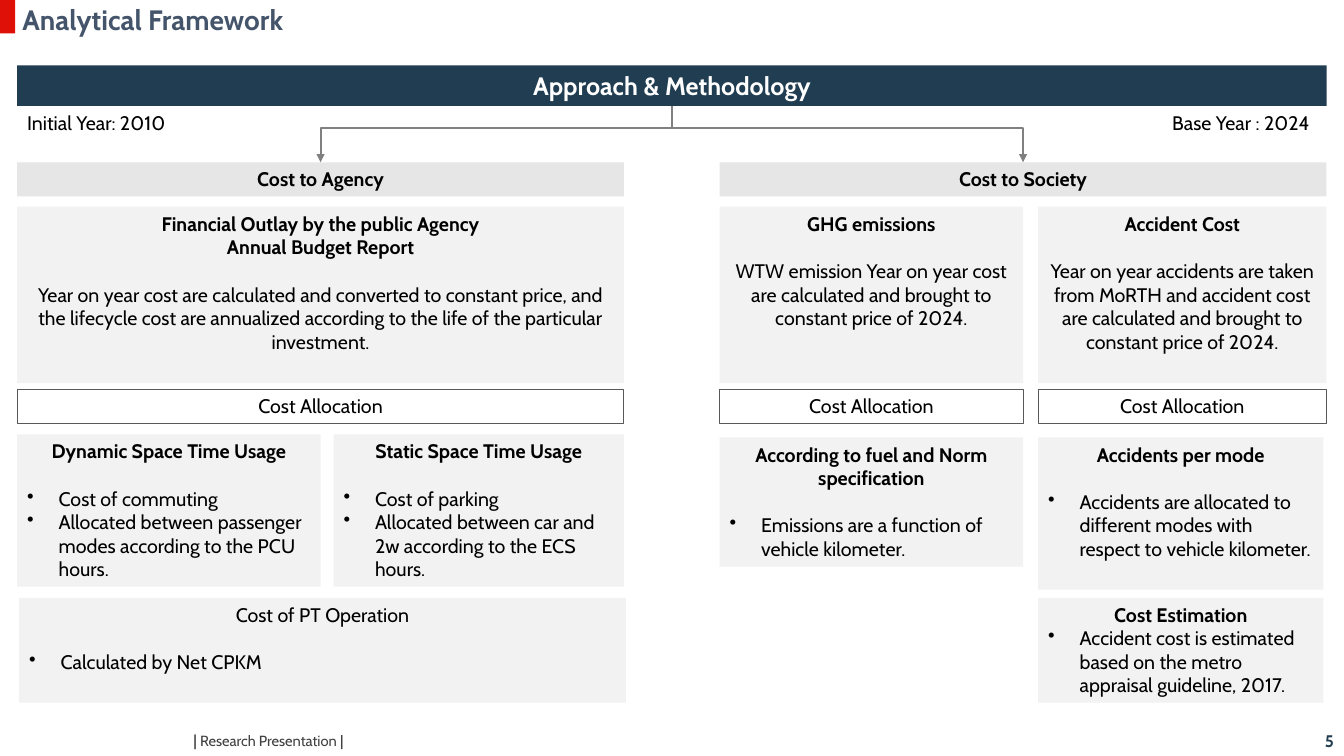
from dataclasses import dataclass

from lxml import etree
from pptx import Presentation
from pptx.dml.color import RGBColor
from pptx.enum.shapes import MSO_CONNECTOR, MSO_SHAPE
from pptx.enum.text import MSO_ANCHOR, PP_ALIGN
from pptx.oxml.ns import qn
from pptx.util import Pt

RECTANGLE = MSO_SHAPE.RECTANGLE
STRAIGHT = MSO_CONNECTOR.STRAIGHT
TOP, MIDDLE = MSO_ANCHOR.TOP, MSO_ANCHOR.MIDDLE
LEFT, CENTER, RIGHT = PP_ALIGN.LEFT, PP_ALIGN.CENTER, PP_ALIGN.RIGHT

FONT = "Cabin"
BLACK, WHITE, NAVY, SLATE = "000000", "FFFFFF", "203D52", "44546A"
RED, PALE, BAND, GREY, OUTLINE = "DF1007", "F2F2F2", "E7E6E6", "808080", "595959"

# Column edges and widths
AGENCY_X, STATIC_X, SOCIETY_X, ACCIDENT_X = 12.3, 238.3, 514.1, 741.6
HALF_W, WIDE_W, STATIC_W, ACCIDENT_W, MODE_W = 433.4, 216.7, 207.4, 205.9, 203.8
# Row tops and heights
BANNER_Y, YEAR_Y, HEADER_Y, SOURCE_Y = 46.8, 75.6, 116, 147.6
ALLOCATION_Y, USAGE_Y, MODE_Y, LAST_Y = 278, 310.3, 312.5, 427
BAR_H, SOURCE_H, USAGE_H, LAST_H = 24.3, 126, 108.7, 74.9
FORK_Y = 91.4
BLANK_LINE = 17


@dataclass
class Frame:
    x: float
    y: float
    width: float
    height: float


@dataclass
class Line:
    text: str
    bold: bool = False
    bullet: bool = False
    gap: float = 0
    align: PP_ALIGN = CENTER
    size: float = 14
    color: str = BLACK


@dataclass
class Card:
    frame: Frame
    lines: list[Line]
    fill: str = PALE


def rgb(color: str) -> RGBColor:
    return RGBColor.from_string(color)


def heading(text: str) -> Line:
    return Line(text, bold=True)


def bullet(text: str, gap: float = 0) -> Line:
    return Line(text, bullet=True, gap=gap, align=LEFT)


def write_lines(text_frame, lines: list[Line]) -> None:
    text_frame.word_wrap = True
    text_frame.vertical_anchor = TOP
    text_frame.text = "\n".join(line.text for line in lines)
    for para, line in zip(text_frame.paragraphs, lines):
        if line.bullet:
            properties = para._p.get_or_add_pPr()
            properties.set("marL", str(Pt(22.5)))
            properties.set("indent", str(Pt(-22.5)))
            etree.SubElement(properties, qn("a:buChar")).set("char", "•")
        para.alignment = line.align
        if line.gap:
            para.space_before = Pt(line.gap)
        for span in para.runs:
            span.font.name = FONT
            span.font.size = Pt(line.size)
            span.font.bold = line.bold
            span.font.color.rgb = rgb(line.color)


def place(frame: Frame) -> list[Pt]:
    return [Pt(value) for value in (frame.x, frame.y, frame.width, frame.height)]


def add_card(page, card: Card) -> None:
    box = page.shapes.add_shape(RECTANGLE, *place(card.frame))
    box.shadow.inherit = False
    if card.fill:
        box.fill.solid()
        box.fill.fore_color.rgb = rgb(card.fill)
        box.line.fill.background()
    else:
        box.fill.background()
        box.line.color.rgb = rgb(OUTLINE)
        box.line.width = Pt(0.75)
    if card.lines:
        write_lines(box.text_frame, card.lines)


def add_label(page, frame: Frame, line: Line):
    box = page.shapes.add_textbox(*place(frame))
    write_lines(box.text_frame, [line])
    return box.text_frame


def style_route(route) -> None:
    route.line.color.rgb = rgb(GREY)
    route.line.width = Pt(1.5)


def add_fork(page) -> None:
    left, right = AGENCY_X + HALF_W / 2, SOCIETY_X + HALF_W / 2
    builder = page.shapes.build_freeform(Pt(left), Pt(HEADER_Y))
    corners = [(left, FORK_Y), (right, FORK_Y), (right, HEADER_Y)]
    builder.add_line_segments([(Pt(x), Pt(y)) for x, y in corners], close=False)
    fork = builder.convert_to_shape()
    fork.shadow.inherit = False
    fork.fill.background()
    style_route(fork)
    for end in ("a:headEnd", "a:tailEnd"):
        etree.SubElement(fork.line._get_or_add_ln(), qn(end)).set("type", "triangle")

    middle = Pt((left + right) / 2)
    stem = page.shapes.add_connector(STRAIGHT, middle, Pt(YEAR_Y), middle, Pt(FORK_Y))
    style_route(stem)
    etree.SubElement(stem._element.spPr, qn("a:effectLst"))


def bar(x: float, y: float, width: float, line: Line, fill: str = "") -> Card:
    return Card(Frame(x, y, width, BAR_H), [line], fill)


CARDS = [
    Card(Frame(0, 0, 10.8, 23.8), [], RED),
    Card(Frame(AGENCY_X, BANNER_Y, 935.3, 28.8),
         [Line("Approach & Methodology", bold=True, size=18, color=WHITE)], NAVY),
    bar(AGENCY_X, HEADER_Y, HALF_W, heading("Cost to Agency"), BAND),
    bar(SOCIETY_X, HEADER_Y, HALF_W, heading("Cost to Society"), BAND),
    # Sources of cost
    Card(Frame(AGENCY_X, SOURCE_Y, HALF_W, SOURCE_H), [
        heading("Financial Outlay by the public Agency"),
        heading("Annual Budget Report"),
        Line("Year on year cost are calculated and converted to constant price, and the "
             "lifecycle cost are annualized according to the life of the particular "
             "investment.", gap=BLANK_LINE)]),
    Card(Frame(SOCIETY_X, SOURCE_Y, WIDE_W, SOURCE_H), [
        heading("GHG emissions"),
        Line("WTW emission Year on year cost are calculated and brought to constant "
             "price of 2024.", gap=BLANK_LINE)]),
    Card(Frame(ACCIDENT_X, SOURCE_Y, ACCIDENT_W, SOURCE_H), [
        heading("Accident Cost"),
        Line("Year on year accidents are taken from MoRTH and accident cost are "
             "calculated and brought to constant price of 2024.", gap=BLANK_LINE)]),
    # Allocation bars
    *[bar(x, ALLOCATION_Y, width, Line("Cost Allocation")) for x, width in
      ((AGENCY_X, HALF_W), (SOCIETY_X, WIDE_W), (ACCIDENT_X, ACCIDENT_W))],
    # Allocation rules
    Card(Frame(AGENCY_X, USAGE_Y, WIDE_W, USAGE_H), [
        heading("Dynamic Space Time Usage"),
        bullet("Cost of commuting", BLANK_LINE),
        bullet("Allocated between passenger modes according to the PCU hours.")]),
    Card(Frame(STATIC_X, USAGE_Y, STATIC_W, USAGE_H), [
        heading("Static Space Time Usage"),
        bullet("Cost of parking", BLANK_LINE),
        bullet("Allocated between car and 2w according to the ECS hours.")]),
    Card(Frame(SOCIETY_X, MODE_Y, WIDE_W, 92.2), [
        heading("According to fuel and Norm specification"),
        bullet("Emissions are a function of vehicle kilometer.", BLANK_LINE)]),
    Card(Frame(ACCIDENT_X, MODE_Y, MODE_W, USAGE_H), [
        heading("Accidents per mode"),
        bullet("Accidents are allocated to different modes with respect to vehicle "
               "kilometer.", BLANK_LINE)]),
    Card(Frame(13.7, LAST_Y, HALF_W, LAST_H), [
        Line("Cost of PT Operation"),
        bullet("Calculated by Net CPKM", BLANK_LINE)]),
    Card(Frame(ACCIDENT_X, LAST_Y, MODE_W, LAST_H), [
        heading("Cost Estimation"),
        bullet("Accident cost is estimated based on the metro appraisal guideline, 2017.")]),
]


def main() -> None:
    deck = Presentation()
    deck.slide_width, deck.slide_height = Pt(960), Pt(540)
    page = deck.slides.add_slide(deck.slide_layouts[6])

    for card in CARDS:
        add_card(page, card)
    add_fork(page)

    # Title and years
    title = add_label(page, Frame(0, 0, 893.5, 27.4), Line(
        "Analytical Framework", bold=True, align=LEFT, size=20, color=SLATE))
    title.margin_left, title.margin_top, title.margin_bottom = Pt(16), 0, 0
    title.vertical_anchor = MIDDLE
    for x, text in ((AGENCY_X, "Initial Year: 2010"), (830.2, "Base Year : 2024")):
        add_label(page, Frame(x, YEAR_Y, 118, BAR_H), Line(text, align=LEFT))

    # Footer and page number
    footer = add_label(page, Frame(131, 518.4, 384.5, 20.9), Line(
        "", align=LEFT))
    footer.vertical_anchor = MIDDLE
    for text, size, bold in (("|", 11, True), (" Research Presentation ", 10.5, False),
                             ("|", 10.5, True)):
        span = footer.paragraphs[0].add_run()
        span.text = text
        span.font.name, span.font.size, span.font.bold = FONT, Pt(size), bold
        span.font.color.rgb = rgb("404040")
    add_label(page, Frame(743.8, 518.4, 216, 20.9), Line(
        "5", bold=True, align=RIGHT, size=12, color=NAVY))

    deck.save("out.pptx")


if __name__ == "__main__":
    main()
